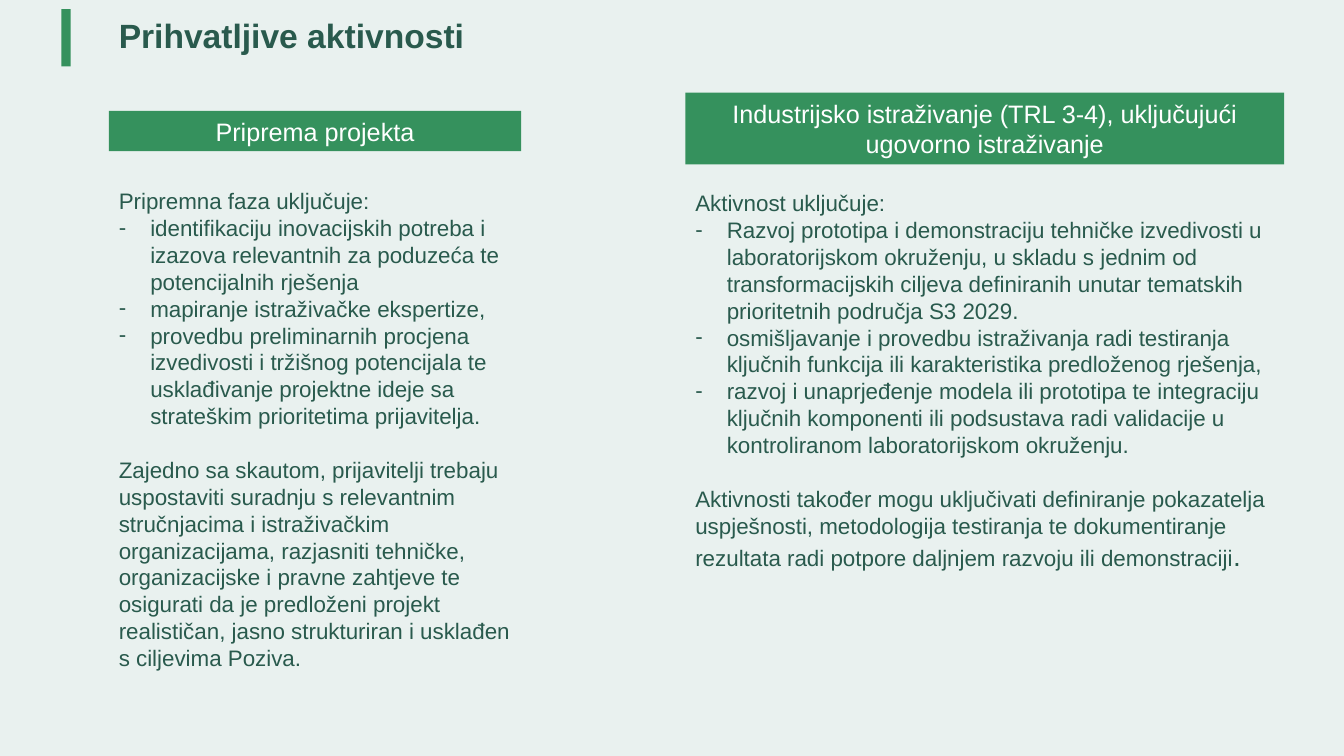
from lxml import etree
from pptx import Presentation
from pptx.dml.color import RGBColor
from pptx.enum.shapes import MSO_SHAPE
from pptx.enum.text import MSO_ANCHOR, PP_ALIGN
from pptx.oxml.ns import qn
from pptx.util import Pt

RECT = MSO_SHAPE.RECTANGLE
MIDDLE = MSO_ANCHOR.MIDDLE
CENTER = PP_ALIGN.CENTER

FONT = "Arial"
BACKGROUND, GREEN, DARK, WHITE = "E9F1EF", "35915D", "295A4D", "FFFFFF"
BODY_SIZE = 16
PARAGRAPH_GAP = 19.2
BULLET_INDENT = 22.5

# Each column: left, width, heading (top, height, text), body top and height,
# introduction, bullets, closing runs (text, size)
COLUMNS = [
    (77.76, 294.48, (79.2, 28.8, "Priprema projekta"), (130.32, 356.4),
     "Pripremna faza uključuje:",
     ["identifikaciju inovacijskih potreba i izazova relevantnih za poduzeća "
      "te potencijalnih rješenja",
      "mapiranje istraživačke ekspertize,",
      "provedbu preliminarnih procjena izvedivosti i tržišnog potencijala te "
      "usklađivanje projektne ideje sa strateškim prioritetima prijavitelja."],
     [("Zajedno sa skautom, prijavitelji trebaju uspostaviti suradnju s "
       "relevantnim stručnjacima i istraživačkim organizacijama, razjasniti "
       "tehničke, organizacijske i pravne zahtjeve te osigurati da je "
       "predloženi projekt realističan, jasno strukturiran i usklađen s "
       "ciljevima Poziva.", BODY_SIZE)]),
    (489.6, 427.68,
     (66.24, 51.12, "Industrijsko istraživanje (TRL 3-4), uključujući "
      "ugovorno istraživanje"), (131.76, 280.8),
     "Aktivnost uključuje:",
     ["Razvoj prototipa i demonstraciju tehničke izvedivosti u laboratorijskom "
      "okruženju, u skladu s jednim od transformacijskih ciljeva definiranih "
      "unutar tematskih prioritetnih područja S3 2029.",
      "osmišljavanje i provedbu istraživanja radi testiranja ključnih funkcija "
      "ili karakteristika predloženog rješenja,",
      "razvoj i unaprjeđenje modela ili prototipa te integraciju ključnih "
      "komponenti ili podsustava radi validacije u kontroliranom "
      "laboratorijskom okruženju."],
     [("Aktivnosti također mogu uključivati definiranje pokazatelja "
       "uspješnosti, metodologija testiranja te dokumentiranje rezultata radi "
       "potpore daljnjem razvoju ili demonstraciji", BODY_SIZE), (".", 20)]),
]


def rgb(color):
    return RGBColor.from_string(color)


def add_run(p, text, size, color=DARK, bold=False):
    r = p.add_run()
    r.text = text
    r.font.name = FONT
    r.font.size = Pt(size)
    r.font.bold = bold
    r.font.color.rgb = rgb(color)


def add_bar(s, left, top, width, height):
    sp = s.shapes.add_shape(RECT, Pt(left), Pt(top), Pt(width), Pt(height))
    sp.shadow.inherit = False
    sp.fill.solid()
    sp.fill.fore_color.rgb = rgb(GREEN)
    sp.line.fill.background()
    return sp


def add_text_box(s, left, top, width, height):
    sp = s.shapes.add_textbox(Pt(left), Pt(top), Pt(width), Pt(height))
    tf = sp.text_frame
    tf.word_wrap = True
    return tf


def add_title(s, text):
    tf = add_text_box(s, 77.76, 10.08, 771.12, 33.84)
    tf.vertical_anchor = MIDDLE
    p = tf.paragraphs[0]
    p.line_spacing = 0.9
    add_run(p, text, 24, bold=True)


def add_heading(s, left, top, width, height, text):
    tf = add_bar(s, left, top, width, height).text_frame
    tf.word_wrap = True
    tf.vertical_anchor = MIDDLE
    p = tf.paragraphs[0]
    p.alignment = CENTER
    add_run(p, text, 18, WHITE)


def add_dash(p):
    pPr = p._p.get_or_add_pPr()
    pPr.set("marL", str(Pt(BULLET_INDENT)))
    pPr.set("indent", str(-Pt(BULLET_INDENT)))
    etree.SubElement(pPr, qn("a:buFont"), typeface=FONT)
    etree.SubElement(pPr, qn("a:buChar"), char="-")


def add_body(s, left, top, width, height, intro, bullets, closing):
    tf = add_text_box(s, left, top, width, height)
    add_run(tf.paragraphs[0], intro, BODY_SIZE)
    for text in bullets:
        p = tf.add_paragraph()
        add_dash(p)
        add_run(p, text, BODY_SIZE)
    p = tf.add_paragraph()
    p.space_before = Pt(PARAGRAPH_GAP)
    for text, size in closing:
        add_run(p, text, size)


def main():
    prs = Presentation()
    prs.slide_width, prs.slide_height = Pt(960), Pt(540)
    s = prs.slides.add_slide(prs.slide_layouts[6])
    s.background.fill.solid()
    s.background.fill.fore_color.rgb = rgb(BACKGROUND)

    # Title with its accent bar
    add_title(s, "Prihvatljive aktivnosti")
    add_bar(s, 43.92, 6.48, 6.48, 41.04)

    # Activity columns
    for left, width, heading, body, intro, bullets, closing in COLUMNS:
        top, height, text = heading
        add_heading(s, left, top, width, height, text)
        top, height = body
        add_body(s, left, top, width, height, intro, bullets, closing)

    prs.save("out.pptx")


if __name__ == "__main__":
    main()
